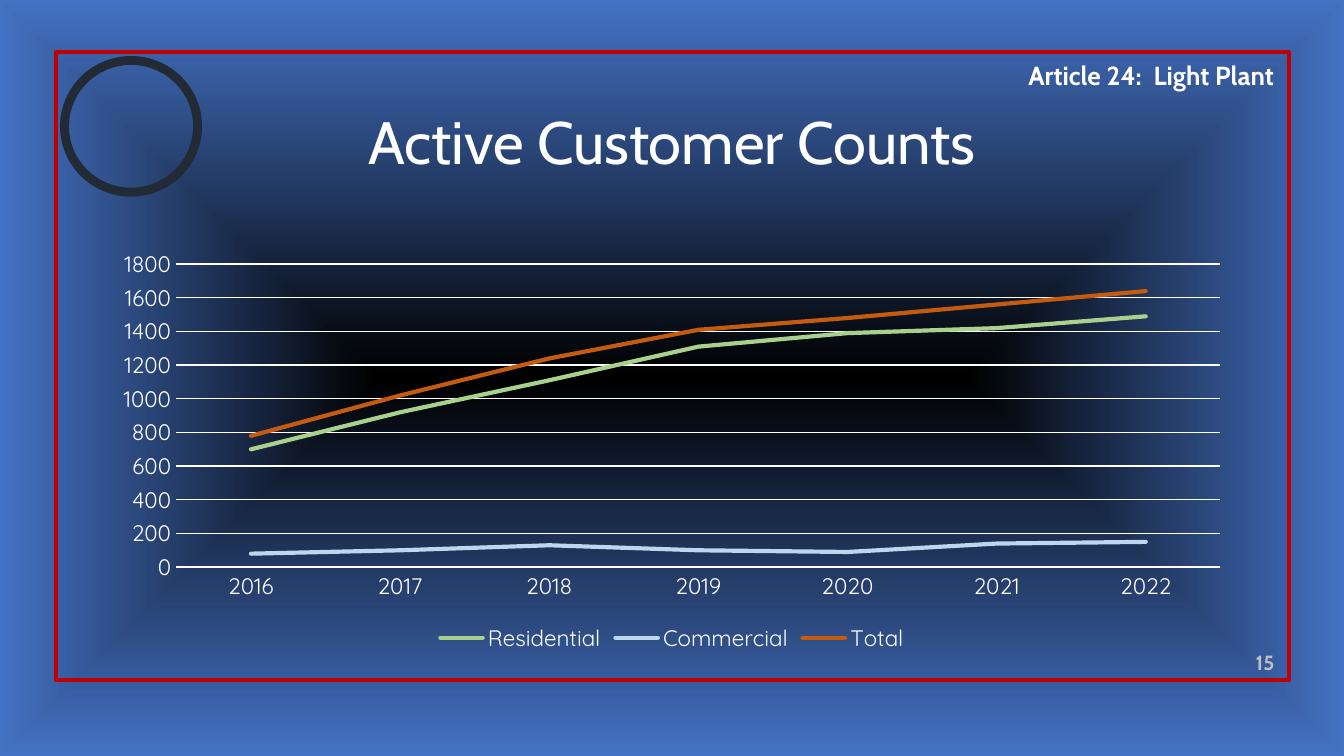
import pptx
import pptx.chart.data
import pptx.dml.color
import pptx.enum.chart
import pptx.enum.shapes
import pptx.enum.text
import pptx.oxml
import pptx.oxml.ns
import pptx.util

Inches = pptx.util.Inches
Pt = pptx.util.Pt
RGBColor = pptx.dml.color.RGBColor
Align = pptx.enum.text.PP_ALIGN
Anchor = pptx.enum.text.MSO_ANCHOR
Preset = pptx.enum.shapes.MSO_SHAPE
XL = pptx.enum.chart

BLACK = RGBColor(0x00, 0x00, 0x00)
BLUE = RGBColor(0x44, 0x72, 0xC4)
WHITE = RGBColor(0xFF, 0xFF, 0xFF)
GREY = RGBColor(0xBF, 0xBF, 0xBF)
RED = RGBColor(0xC0, 0x00, 0x00)
SLATE = RGBColor(0x22, 0x2A, 0x35)
GREEN = RGBColor(0xA9, 0xD1, 0x8E)
PALE_BLUE = RGBColor(0xBD, 0xD7, 0xEE)
ORANGE = RGBColor(0xC5, 0x5A, 0x11)

YEARS = [str(year) for year in range(2016, 2023)]
CUSTOMERS = [
    ("Residential", GREEN, (700, 920, 1110, 1310, 1390, 1420, 1490)),
    ("Commercial", PALE_BLUE, (80, 100, 130, 100, 90, 140, 150)),
    ("Total", ORANGE, (780, 1020, 1240, 1410, 1480, 1560, 1640)),
]


class SlideBuilder:
    """Draws styled elements on the current slide."""

    text_font = "Cabin"
    chart_font = "Quicksand"

    def __init__(self, slide):
        self.slide = slide

    def background(self, centre, edge):
        fill = self.slide.background.fill
        fill.gradient()
        for stop, color in zip(fill.gradient_stops, (centre, edge)):
            stop.color.rgb = color
        linear = next(self.slide.element.iter(pptx.oxml.ns.qn("a:lin")))
        shaped = pptx.oxml.parse_xml(
            f'<a:path {pptx.oxml.ns.nsdecls("a")} path="shape">'
            '<a:fillToRect l="50000" t="50000" r="50000" b="50000"/></a:path>'
        )
        linear.getparent().replace(linear, shaped)

    def outline(self, preset, left, top, width, height, color, weight):
        shape = self.slide.shapes.add_shape(
            preset, Inches(left), Inches(top), Inches(width), Inches(height)
        )
        shape.shadow.inherit = False
        shape.fill.background()
        shape.line.color.rgb = color
        shape.line.width = Pt(weight)

    def text(self, words, left, top, width, height, size, color=WHITE,
             bold=False, align=Align.RIGHT, anchor=Anchor.TOP):
        box = self.slide.shapes.add_textbox(
            Inches(left), Inches(top), Inches(width), Inches(height)
        )
        frame = box.text_frame
        frame.word_wrap = True
        frame.vertical_anchor = anchor
        paragraph = frame.paragraphs[0]
        paragraph.alignment = align
        run = paragraph.add_run()
        run.text = words
        self.style(run.font, self.text_font, size, color)
        run.font.bold = bold

    def style(self, font, name, size, color=WHITE):
        font.name = name
        font.size = Pt(size)
        font.color.rgb = color

    def line_chart(self, categories, rows, left, top, width, height):
        data = pptx.chart.data.CategoryChartData()
        data.categories = categories
        for name, _, values in rows:
            data.add_series(name, values)
        chart = self.slide.shapes.add_chart(
            XL.XL_CHART_TYPE.LINE, Inches(left), Inches(top),
            Inches(width), Inches(height), data
        ).chart
        chart.has_title = False
        self.style(chart.font, self.chart_font, 10)
        chart.has_legend = True
        chart.legend.position = XL.XL_LEGEND_POSITION.BOTTOM
        chart.legend.include_in_layout = False
        self.style(chart.legend.font, self.chart_font, 12)

        years, counts = chart.category_axis, chart.value_axis
        for axis in (years, counts):
            axis.major_tick_mark = XL.XL_TICK_MARK.NONE
            axis.minor_tick_mark = XL.XL_TICK_MARK.NONE
            self.style(axis.tick_labels.font, self.chart_font, 12)
        counts.minimum_scale, counts.maximum_scale = 0, 1800
        counts.major_unit = 200
        counts.has_major_gridlines = True
        counts.format.line.fill.background()
        for line in (years.format.line, counts.major_gridlines.format.line):
            line.color.rgb = WHITE
            line.width = Pt(0.75)

        plot = chart.plots[0]
        plot.vary_by_categories = False
        for series, (_, color, _) in zip(plot.series, rows):
            series.smooth = False
            series.marker.style = XL.XL_MARKER_STYLE.NONE
            series.format.line.color.rgb = color
            series.format.line.width = Pt(2.25)
            for stroke in series._element.iter(pptx.oxml.ns.qn("a:ln")):
                stroke.set("cap", "rnd")


def main():
    deck = pptx.Presentation()
    deck.slide_width = Inches(10)
    deck.slide_height = deck.slide_width * 9 // 16
    page = SlideBuilder(deck.slides.add_slide(deck.slide_layouts[6]))
    page.background(BLACK, BLUE)
    page.outline(Preset.RECTANGLE, 0.42, 0.39, 9.17, 4.67, RED, 2.25)
    page.text("Article 24:  Light Plant", 6.91, 0.39, 2.67, 0.34, 14, bold=True)
    page.outline(Preset.OVAL, 0.48, 0.45, 0.99, 0.98, SLATE, 4.75)
    page.text("Active Customer Counts", 0.49, 0.65, 9.02, 0.79, 32,
              align=Align.CENTER, anchor=Anchor.MIDDLE)
    page.line_chart(YEARS, CUSTOMERS, 0.75, 1.8, 8.5, 3.09)
    page.text("15", 9, 4.83, 0.58, 0.24, 11, GREY, bold=True, anchor=Anchor.BOTTOM)
    deck.save("out.pptx")


if __name__ == "__main__":
    main()
